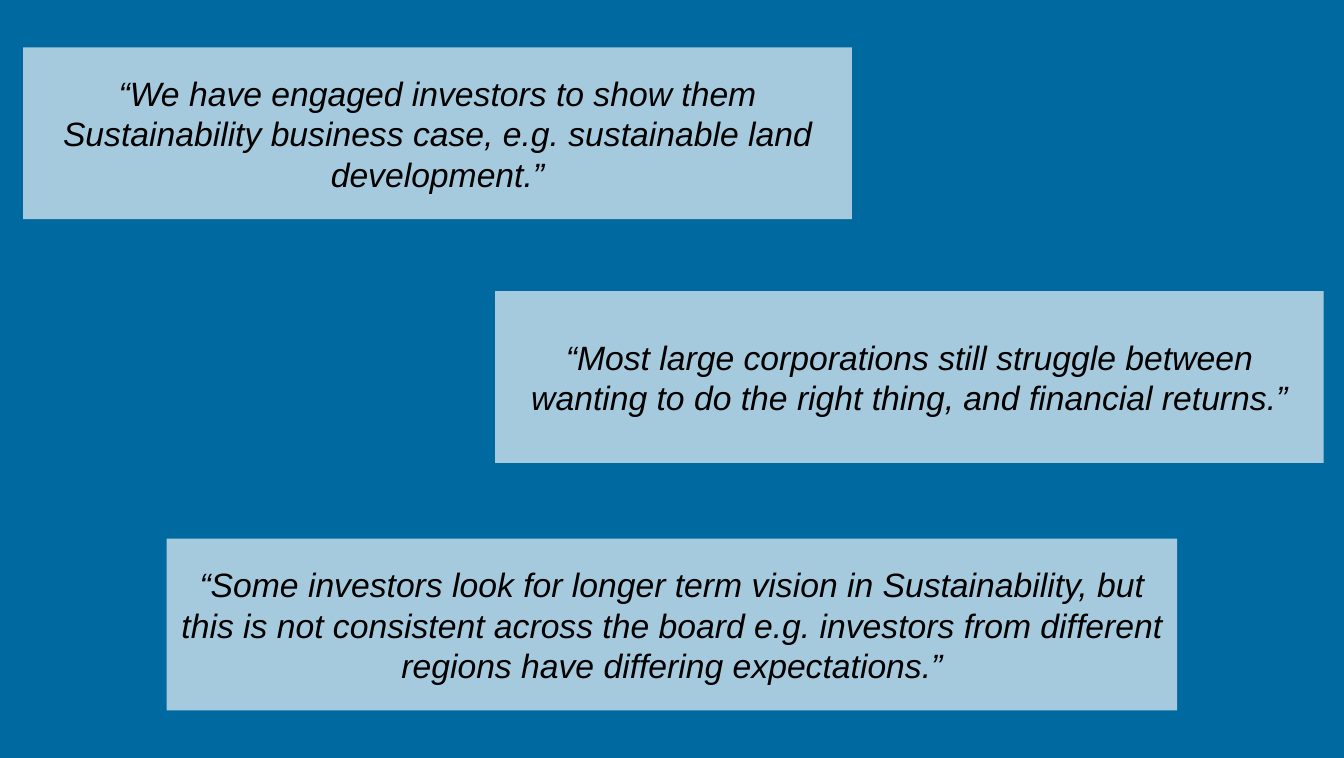
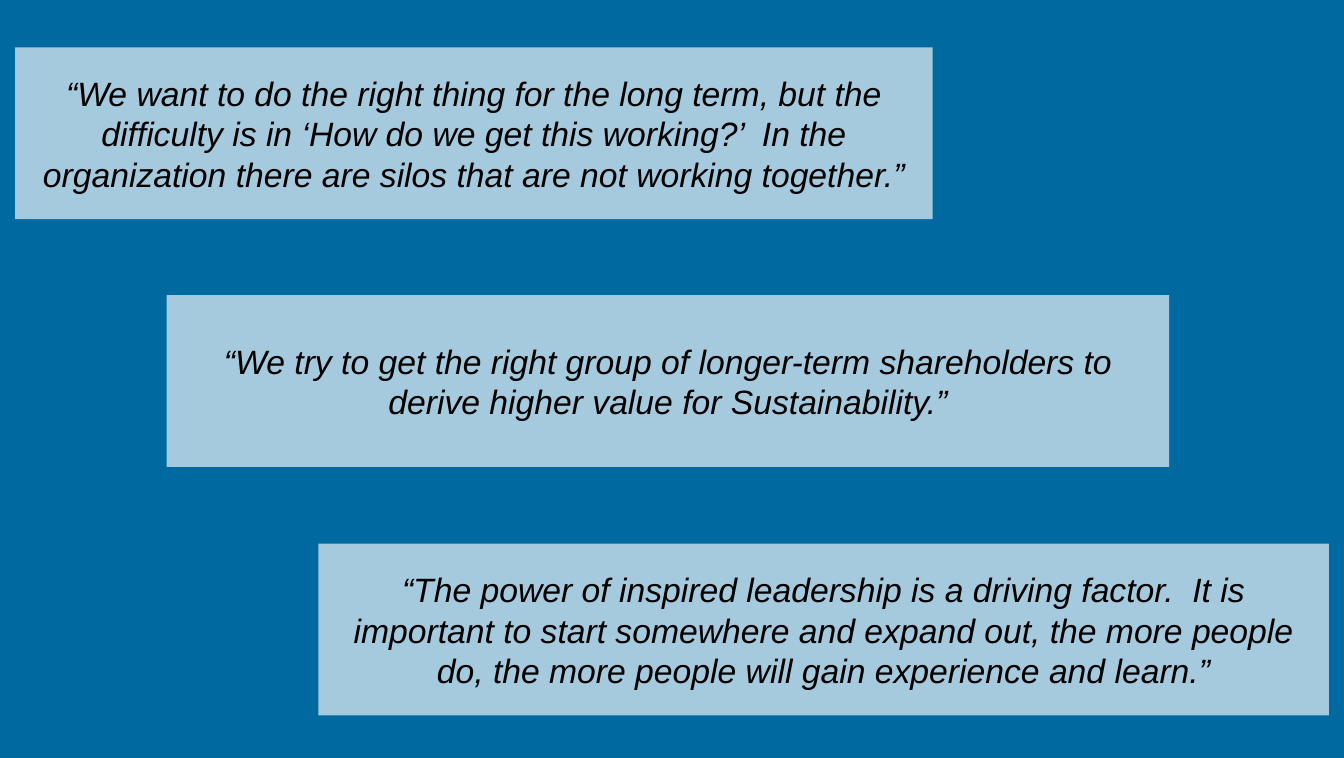
from lxml import etree
from pptx import Presentation
from pptx.dml.color import RGBColor
from pptx.enum.shapes import MSO_SHAPE as Shape
from pptx.enum.text import MSO_ANCHOR as Anchor, PP_ALIGN as Align
from pptx.oxml.ns import qn
from pptx.util import Inches, Pt

WIDE, HIGH = 13.3, 7.5
BLUE, WHITE, BLACK = "006AA0", "FFFFFF", "000000"
QUOTE_HIGH = 1.7
QUOTE_ALPHA = 65
QUOTE_FONT = {"name": "Arial", "size": Pt(24), "italic": True}

# Each quote: left, top, width, text
SLIDES = [
    [
        (0.23, 0.47, 8.2, "“We have engaged investors to show them Sustainability "
         "business case, e.g. sustainable land development.”"),
        (4.9, 2.88, 8.2, "“Most large corporations still struggle between wanting "
         "to do the right thing, and financial returns.”"),
        (1.65, 5.33, 10, "“Some investors look for longer term vision in "
         "Sustainability, but this is not consistent across the board e.g. "
         "investors from different regions have differing expectations.”"),
    ],
    [
        (0.15, 0.47, 9.08, "“We want to do the right thing for the long term, but "
         "the difficulty is in ‘How do we get this working?’  In the "
         "organization there are silos that are not working together.”"),
        (1.65, 2.92, 9.92, "“We try to get the right group of longer-term "
         "shareholders to derive higher value for Sustainability.”"),
        (3.15, 5.38, 10, "“The power of inspired leadership is a driving factor.  "
         "It is important to start somewhere and expand out, the more people "
         "do, the more people will gain experience and learn.”"),
    ],
]


def paint(target, color):
    """Give a fill or a font a solid colour from a hex string."""
    target.rgb = RGBColor.from_string(color)


def add_box(slide, left, top, width, height, color):
    """Add a rectangle with a solid fill, no line and no shadow."""
    box = slide.shapes.add_shape(
        Shape.RECTANGLE, *map(Inches, (left, top, width, height)))
    box.shadow.inherit = False
    box.line.fill.background()
    box.fill.solid()
    paint(box.fill.fore_color, color)
    return box


def set_alpha(box, percent):
    """Set the opacity of a solid fill."""
    color = box.fill._xPr.find(qn("a:solidFill"))[0]
    etree.SubElement(color, qn("a:alpha"), val=str(percent * 1000))


def add_quote(slide, left, top, width, text):
    box = add_box(slide, left, top, width, QUOTE_HIGH, WHITE)
    set_alpha(box, QUOTE_ALPHA)
    frame = box.text_frame
    frame.word_wrap = True
    frame.vertical_anchor = Anchor.MIDDLE
    para = frame.paragraphs[0]
    para.alignment = Align.CENTER
    run = para.add_run()
    run.text = text
    for key, value in QUOTE_FONT.items():
        setattr(run.font, key, value)
    paint(run.font.color, BLACK)


def main():
    deck = Presentation()
    deck.slide_width, deck.slide_height = Inches(WIDE), Inches(HIGH)
    blank = deck.slide_layouts[6]
    for quotes in SLIDES:
        slide = deck.slides.add_slide(blank)
        add_box(slide, 0, 0, WIDE, HIGH, BLUE)
        for quote in quotes:
            add_quote(slide, *quote)
    deck.save("out.pptx")


if __name__ == "__main__":
    main()
